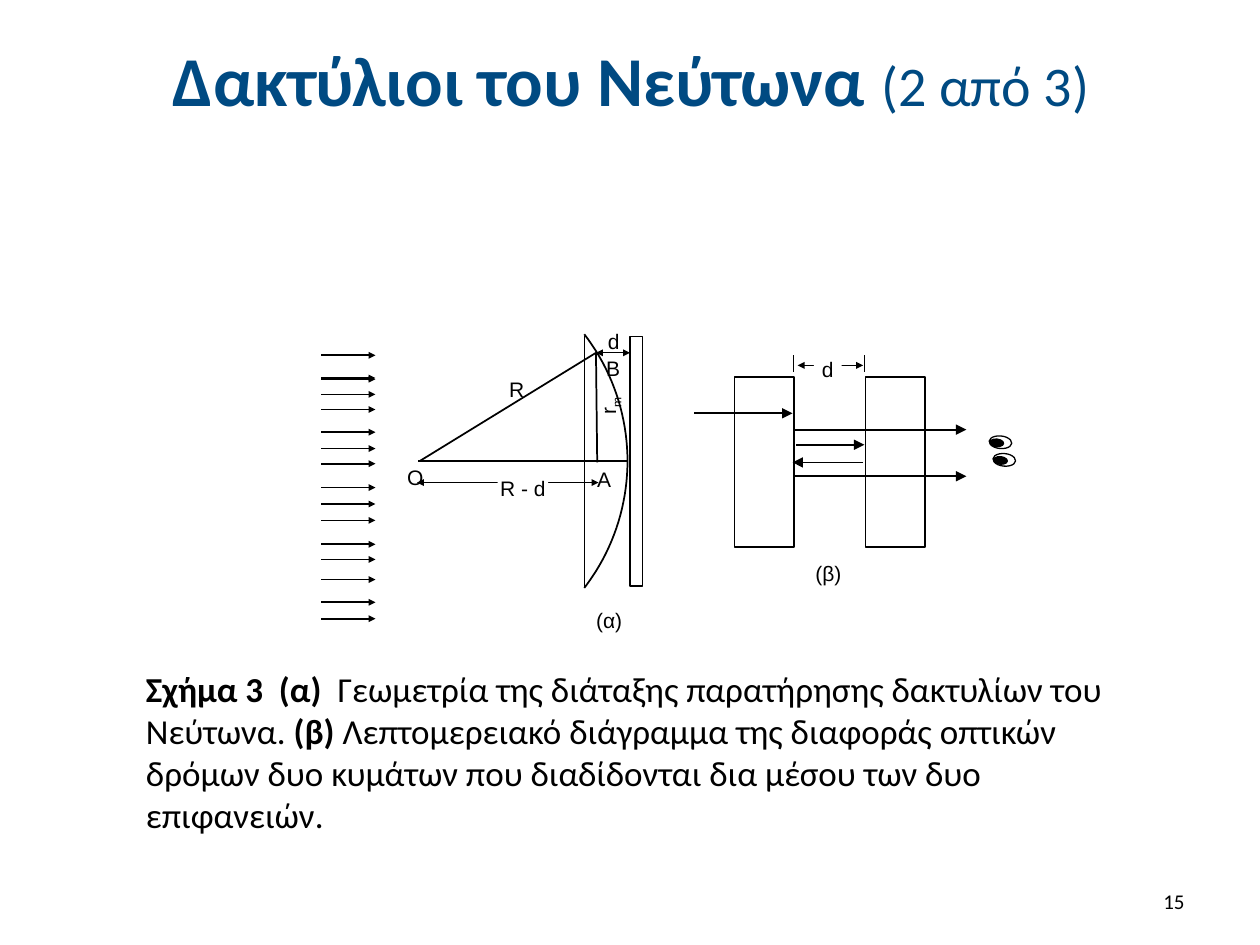
from math import cos, sin, radians
from lxml.etree import SubElement as Sub
from pptx import Presentation
from pptx.dml.color import RGBColor as RGB
from pptx.enum.shapes import MSO_CONNECTOR as Conn, MSO_SHAPE as Shape
from pptx.enum.text import MSO_ANCHOR as Anchor, MSO_AUTO_SIZE as Auto, PP_ALIGN as Align
from pptx.oxml.ns import qn
from pptx.util import Pt

SCALE = 9144
INK, PAPER, BLUE = "000000", "FFFFFF", "004A82"
BARE = dict(margin_left=0, margin_top=0, margin_right=0, margin_bottom=0, word_wrap=True)
MARK = dict(alignment=Align.CENTER, line_spacing=1.15, space_after=Pt(10))


def px(*vals):
    return [round(v * SCALE) for v in vals]


def hue(code):
    return RGB.from_string(code)


def put(item, vals):
    for name, val in vals.items():
        setattr(item, name, val)


class Board:
    """Draws styled elements on the current slide."""

    def __init__(self, slide):
        self.slide = slide
        self.shapes = slide.shapes

    def fill_in(self, frame, runs, look, tint, para):
        line = frame.paragraphs[0]
        put(line, para)
        for text, font in runs:
            run = line.add_run()
            run.text = text
            put(run.font, {**look, **font})
            run.font.color.rgb = hue(tint)
        return line

    def title(self, box, runs):
        head = self.shapes.title
        put(head, dict(zip(("left", "top", "width", "height"), px(*box))))
        put(head.text_frame, dict(vertical_anchor=Anchor.MIDDLE, word_wrap=True,
                                  auto_size=Auto.NONE))
        self.fill_in(head.text_frame, runs, dict(name="Calibri"), BLUE,
                     dict(alignment=Align.CENTER))

    def text(self, box, runs, size, frame, para):
        item = self.shapes.add_textbox(*px(*box))
        put(item.text_frame, frame)
        self.fill_in(item.text_frame, runs, dict(name="Calibri", size=Pt(size)), INK, para)

    def label(self, x, y, text, w=29, h=21, fill=None, sub=None):
        item = self.shapes.add_textbox(*px(x, y, w, h))
        frame = item.text_frame
        put(frame, BARE)
        if fill:
            item.fill.solid()
            item.fill.fore_color.rgb = hue(fill)
        runs = [(part, {}) for part in (text, sub) if part]
        line = self.fill_in(frame, runs, dict(name="Arial", size=Pt(12)), INK, MARK)
        if sub:
            line.runs[1].font._element.set("baseline", "-25000")
            frame._txBody.bodyPr.set("vert", "vert270")

    def ink(self, item, fill, wide):
        item.shadow.inherit = False
        if fill:
            item.fill.solid()
            item.fill.fore_color.rgb = hue(fill)
        else:
            item.fill.background()
        item.line.color.rgb = hue(INK)
        item.line.width = Pt(wide)

    def shape(self, kind, box, fill=None, wide=1, turn=0):
        item = self.shapes.add_shape(kind, *px(*box))
        self.ink(item, fill, wide)
        item.rotation = turn

    def arc(self, x, y, rad, half, steps=40):
        dots = []
        for i in range(steps + 1):
            ang = radians(half * (2 * i / steps - 1))
            dots.append(px(x + rad * cos(ang), y + rad * sin(ang)))
        pen = self.shapes.build_freeform(*dots[0])
        pen.add_line_segments(dots[1:], close=False)
        self.ink(pen.convert_to_shape(), None, 1)

    def line(self, x1, y1, x2, y2, wide=1, ends=(), size="med"):
        item = self.shapes.add_connector(Conn.STRAIGHT, *px(x1, y1, x2, y2))
        item.line.color.rgb = hue(INK)
        item.line.width = Pt(wide)
        stroke = item.line._get_or_add_ln()
        for end in ends:
            Sub(stroke, qn(f"a:{end}End"), type="triangle", w=size, len=size)
        Sub(item._element.spPr, qn("a:effectLst"))

    def span(self, x1, x2, y):
        self.line(x1, y, x2, y, 0.75, ("head", "tail"), "sm")

    def eye(self, x, y):
        self.shape(Shape.OVAL, (x, y, 10, 18), PAPER, 0.75, 95.5)
        self.shape(Shape.OVAL, (x - 1, y + 4, 6, 11), INK, 0.75, 95.5)


def lens(board):
    board.span(331, 475, 383)
    board.arc(333, 366, 165, 37.6)
    board.shape(Shape.RECTANGLE, (500, 267, 10, 198), PAPER)
    for ends in ((464, 267, 464, 466), (332, 366, 498, 366),
                 (333, 366, 473, 280), (473, 280, 474, 367)):
        board.line(*ends)
    board.span(473, 500, 280)
    board.label(476, 258, "d", 22)
    board.label(399, 296, "R", 22)
    board.label(395, 374, "R - d", 40, 19, PAPER)
    board.label(469, 312, "r", 22, sub="m")
    for x, y, text in ((315, 366, "O"), (465, 367, "A"), (472, 279, "B"), (469, 479, "(α)")):
        board.label(x, y, text)
    for y in (282, 300, 301, 313, 325, 343, 356, 368, 387, 400, 413, 432, 444, 460, 478, 491):
        board.line(255, y, 298, y, ends=("tail",), size="sm")


def plates(board):
    for x in (583, 687):
        board.shape(Shape.RECTANGLE, (x, 299, 47, 135))
    board.span(633, 685, 290)
    for x in (630, 686):
        board.line(x, 282, x, 295, 0.75)
    board.label(646, 280, "d", 22, fill=PAPER)
    for x1, x2, y in ((551, 629, 328), (630, 767, 341), (632, 686, 353),
                      (685, 629, 367), (630, 767, 378)):
        board.line(x1, y, x2, y, ends=("tail",))
    board.label(643, 442, "(β)")
    board.eye(789, 342)
    board.eye(792, 356)


def main():
    deck = Presentation()
    deck.slide_width, deck.slide_height = px(1000, 750)
    board = Board(deck.slides.add_slide(deck.slide_layouts[5]))
    board.title((51, 13, 900, 99), [
        ("Δακτύλιοι του Νεύτωνα ", dict(size=Pt(40), bold=True)),
        ("(2 από 3)", dict(size=Pt(32), bold=False))])
    lens(board)
    plates(board)
    bold, thin = dict(bold=True), dict(bold=False)
    board.text((106, 525, 792, 145), [
        ("Σχήμα 3  (α)  ", bold),
        ("Γεωμετρία της διάταξης παρατήρησης δακτυλίων του Νεύτωνα. ", thin),
        ("(β)", bold),
        (" Λεπτομερειακό διάγραμμα της διαφοράς οπτικών δρόμων δυο κυμάτων "
         "που διαδίδονται δια μέσου των δυο επιφανειών.", thin)],
        20, dict(word_wrap=True, auto_size=Auto.SHAPE_TO_FIT_TEXT), {})
    board.text((717, 695, 233, 40), [("15", {})], 12,
               dict(word_wrap=True, vertical_anchor=Anchor.MIDDLE),
               dict(alignment=Align.RIGHT))
    deck.save("out.pptx")


if __name__ == "__main__":
    main()
